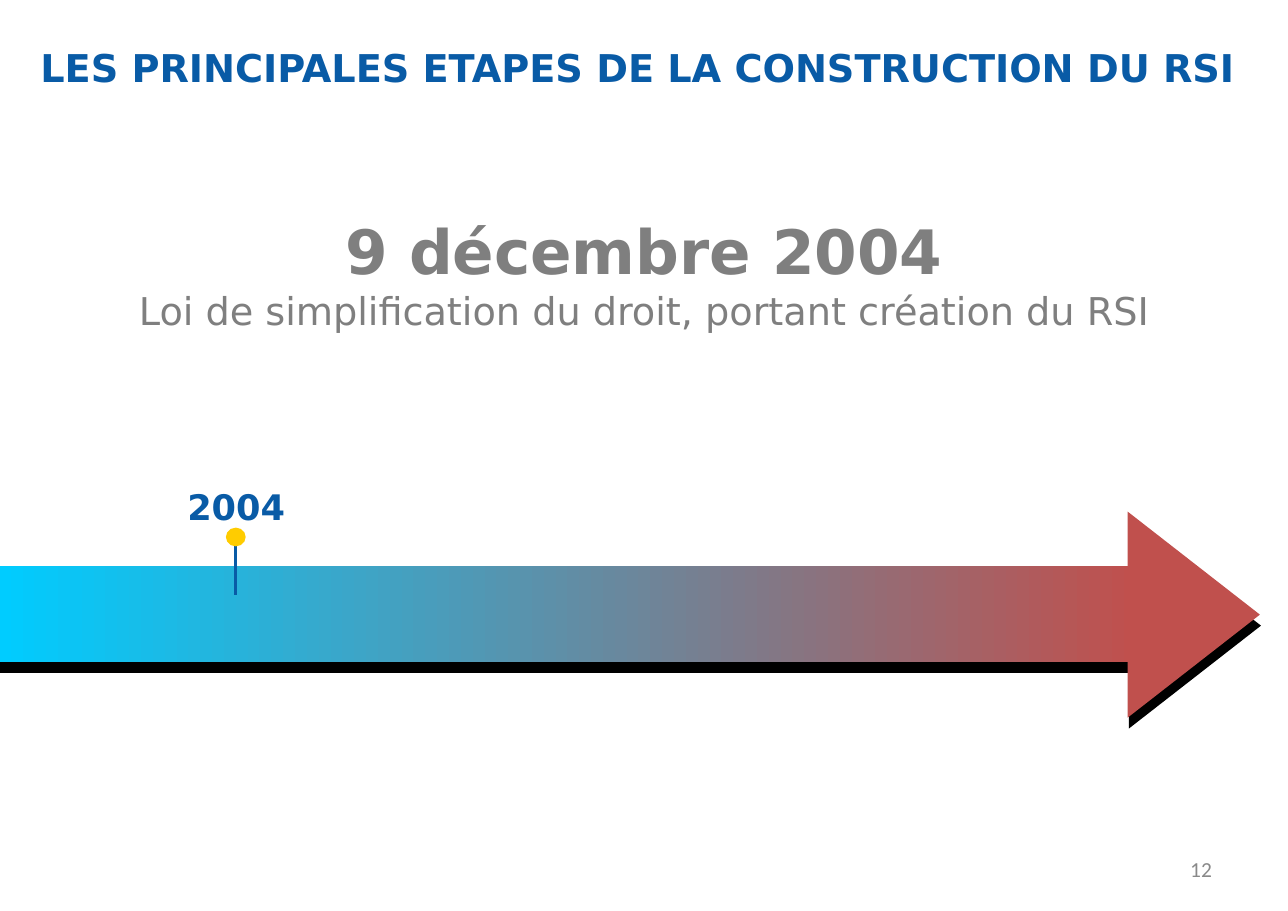
from lxml.etree import SubElement
from pptx import Presentation
from pptx.dml.color import RGBColor
from pptx.enum.shapes import MSO_CONNECTOR as Connector, MSO_SHAPE as Shape
from pptx.enum.text import MSO_ANCHOR as Anchor, MSO_AUTO_SIZE as AutoSize, PP_ALIGN as Align
from pptx.oxml.ns import qn
from pptx.util import Inches, Pt

BLUE = RGBColor(0x09, 0x5B, 0xA6)
GRAY = RGBColor(0x7F, 0x7F, 0x7F)
PALE_GRAY = RGBColor(0x89, 0x89, 0x89)
BLACK = RGBColor(0, 0, 0)
RED = RGBColor(0xC0, 0x50, 0x4D)
CYAN = RGBColor(0x00, 0xCC, 0xFF)
YELLOW = RGBColor(0xFF, 0xCC, 0x00)
MAIN_FONT = "DejaVu Sans"
PAGE_WIDTH, PAGE_HEIGHT = 11.69, 8.27


def place(item, left, top, width, height):
    item.left, item.top = Inches(left), Inches(top)
    item.width, item.height = Inches(width), Inches(height)


def format_frame(frame, anchor=Anchor.TOP, wrap=True):
    frame.auto_size = AutoSize.NONE
    frame.word_wrap = wrap
    frame.vertical_anchor = anchor
    frame.margin_left = frame.margin_right = Inches(0.11)
    frame.margin_top = frame.margin_bottom = Inches(0.06)


def add_span(para, text, size, color, bold=False, font=MAIN_FONT, align=Align.CENTER):
    para.alignment = align
    span = para.add_run()
    span.text = text
    span.font.name = font
    span.font.size = Pt(size)
    span.font.bold = bold
    span.font.color.rgb = color


def add_box(page, left, top, width, height, **layout):
    box = page.shapes.add_textbox(Inches(left), Inches(top), Inches(width), Inches(height))
    format_frame(box.text_frame, **layout)
    return box.text_frame


def add_figure(page, kind, left, top, width, height, color):
    figure = page.shapes.add_shape(kind, Inches(left), Inches(top), Inches(width), Inches(height))
    figure.shadow.inherit = False
    figure.fill.solid()
    figure.fill.fore_color.rgb = color
    figure.line.fill.background()
    return figure


def add_arrow(page, left, top, color):
    head = add_figure(page, Shape.ISOSCELES_TRIANGLE, left + 9.91, top - 0.16, 1.87, 1.2, color)
    head.rotation = 90
    return add_figure(page, Shape.RECTANGLE, left, top, 10.32, 0.87, color)


def fade(figure, start, end):
    figure.fill.gradient()
    figure.fill.gradient_angle = 0
    for stop, color, position in zip(figure.fill.gradient_stops, (start, end), (0, 1)):
        stop.color.rgb = color
        stop.position = position


def add_milestone(page, year, center, top):
    label = add_box(page, center - 0.55, top - 0.44, 1.14, 0.5, wrap=False)
    add_span(label.paragraphs[0], year, 23, BLUE, bold=True, align=Align.LEFT)
    pin = page.shapes.add_connector(
        Connector.STRAIGHT, Inches(center), Inches(top + 0.61), Inches(center), Inches(top))
    pin.line.color.rgb = BLUE
    pin.line.width = Pt(2.25)
    SubElement(pin._element.spPr, qn("a:effectLst"))
    add_figure(page, Shape.OVAL, center - 0.09, top, 0.18, 0.17, YELLOW)


def add_title(page, text):
    title = page.shapes.title
    place(title, 0, 0.39, PAGE_WIDTH, 0.49)
    format_frame(title.text_frame)
    para = title.text_frame.paragraphs[0]
    para.line_spacing = 0.9
    add_span(para, text, 25, BLUE, bold=True)


def main():
    deck = Presentation()
    deck.slide_width, deck.slide_height = Inches(PAGE_WIDTH), Inches(PAGE_HEIGHT)
    page = deck.slides.add_slide(deck.slide_layouts[5])

    add_title(page, "LES PRINCIPALES ETAPES DE LA CONSTRUCTION DU RSI ")

    number = add_box(page, 8.38, 7.67, 2.73, 0.44, anchor=Anchor.MIDDLE)
    add_span(number.paragraphs[0], "12", 14, PALE_GRAY, font="Calibri", align=Align.RIGHT)

    add_arrow(page, 0, 5.24, BLACK)
    fade(add_arrow(page, -0.01, 5.14, RED), CYAN, RED)

    event = add_box(page, 0, 1.88, PAGE_WIDTH, 1.2)
    add_span(event.paragraphs[0], "9 décembre 2004", 40, GRAY, bold=True)
    add_span(event.add_paragraph(), "Loi de simplification du droit, portant création du RSI", 25, GRAY)

    add_milestone(page, "2004", 2.14, 4.79)

    deck.save("out.pptx")


if __name__ == "__main__":
    main()
